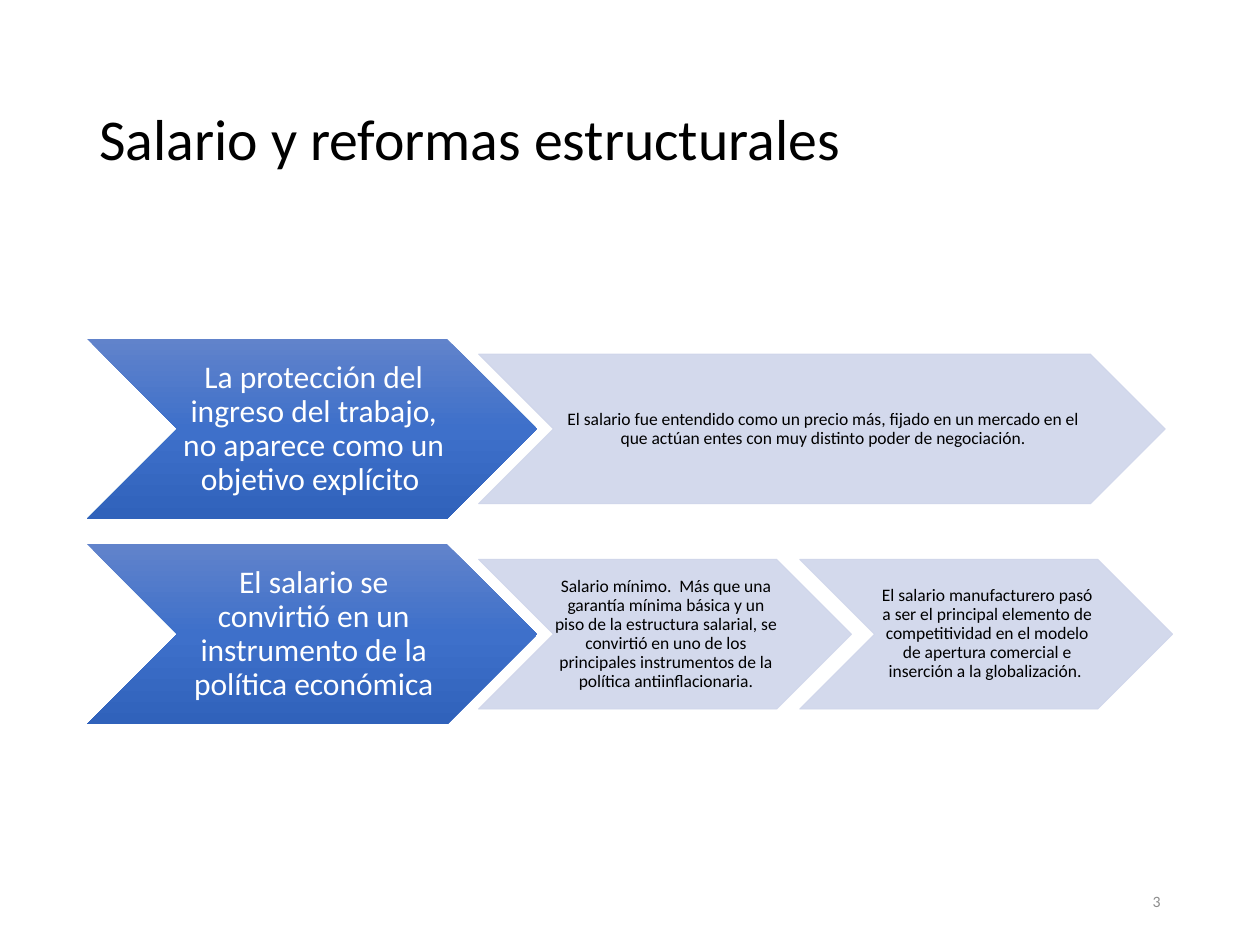
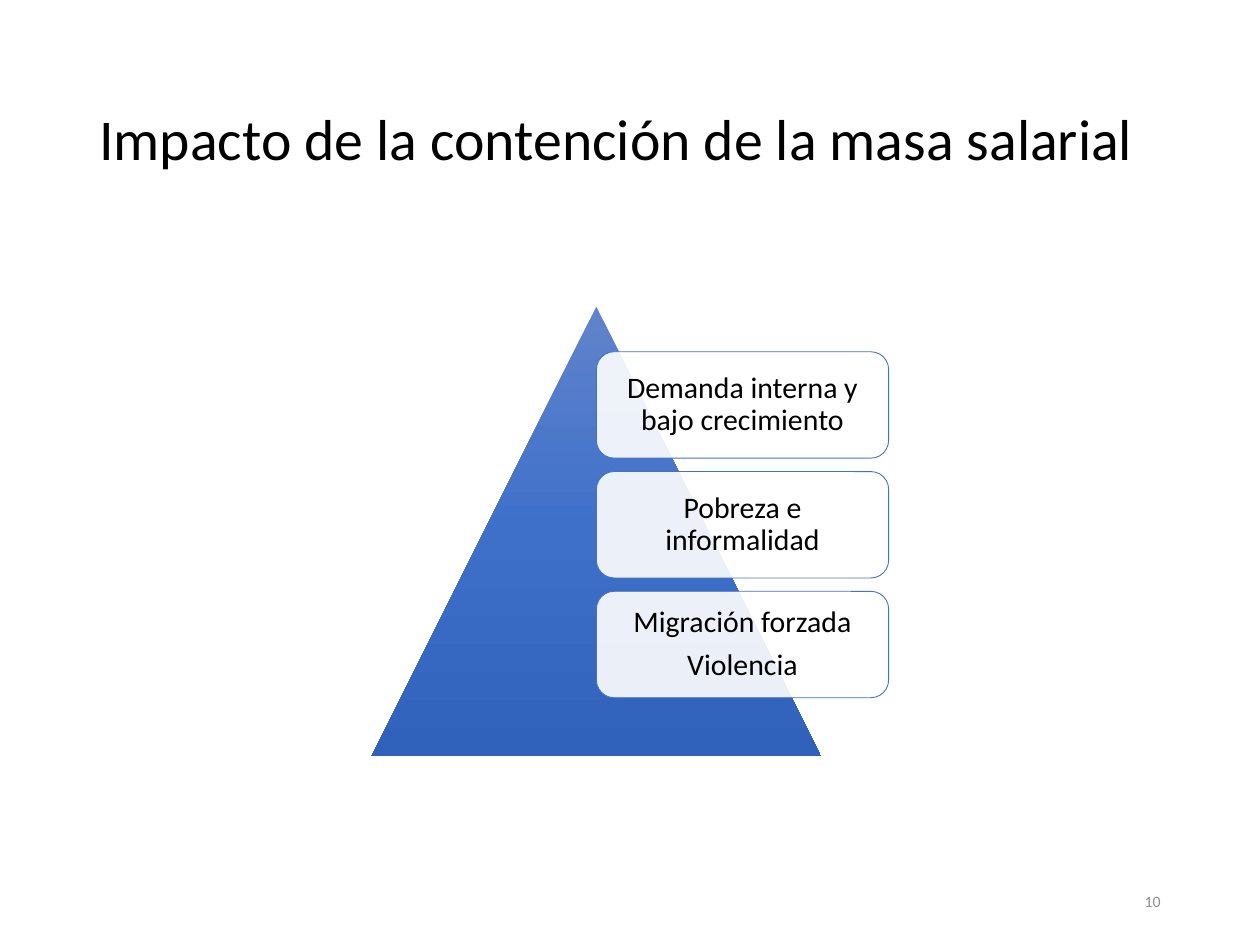
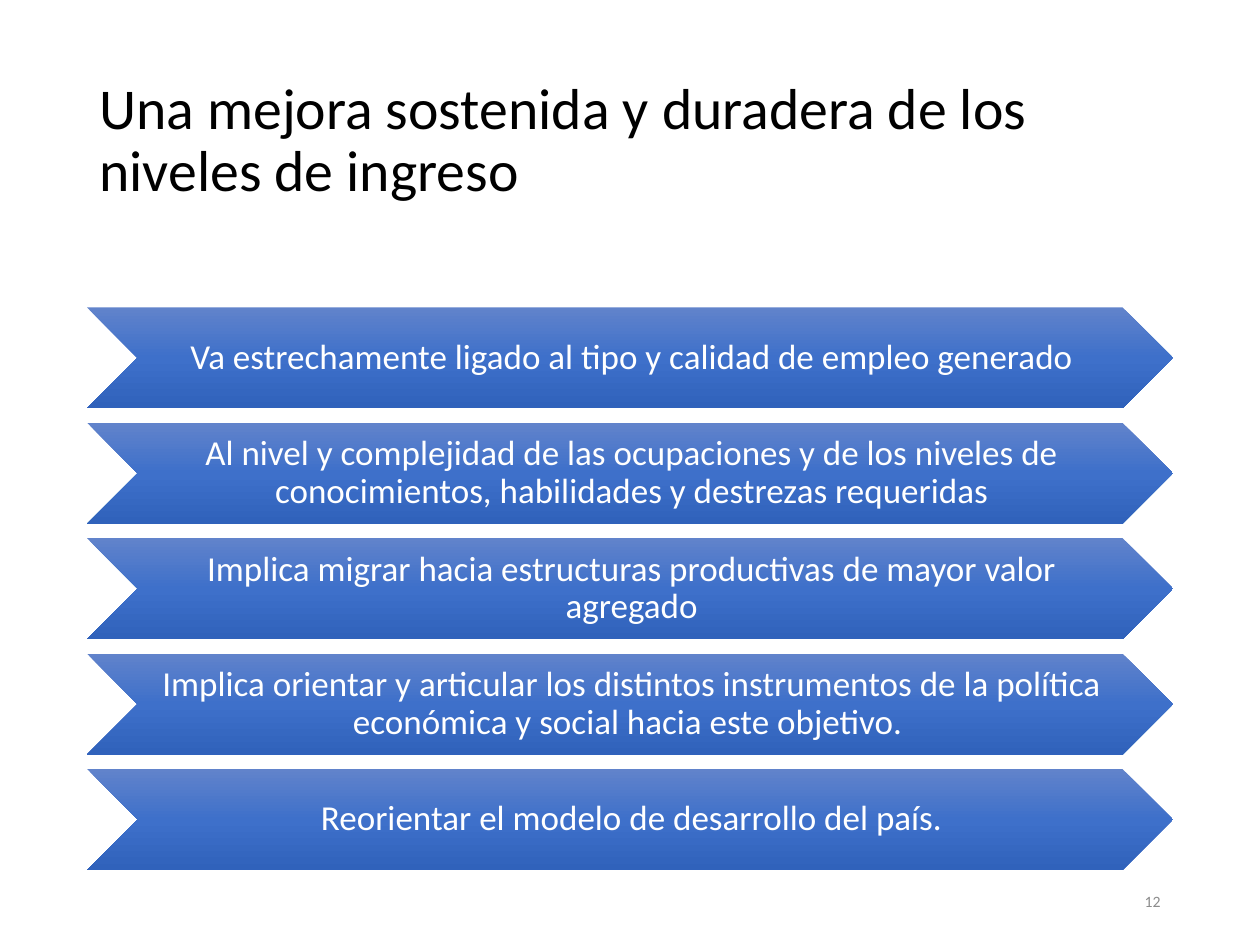
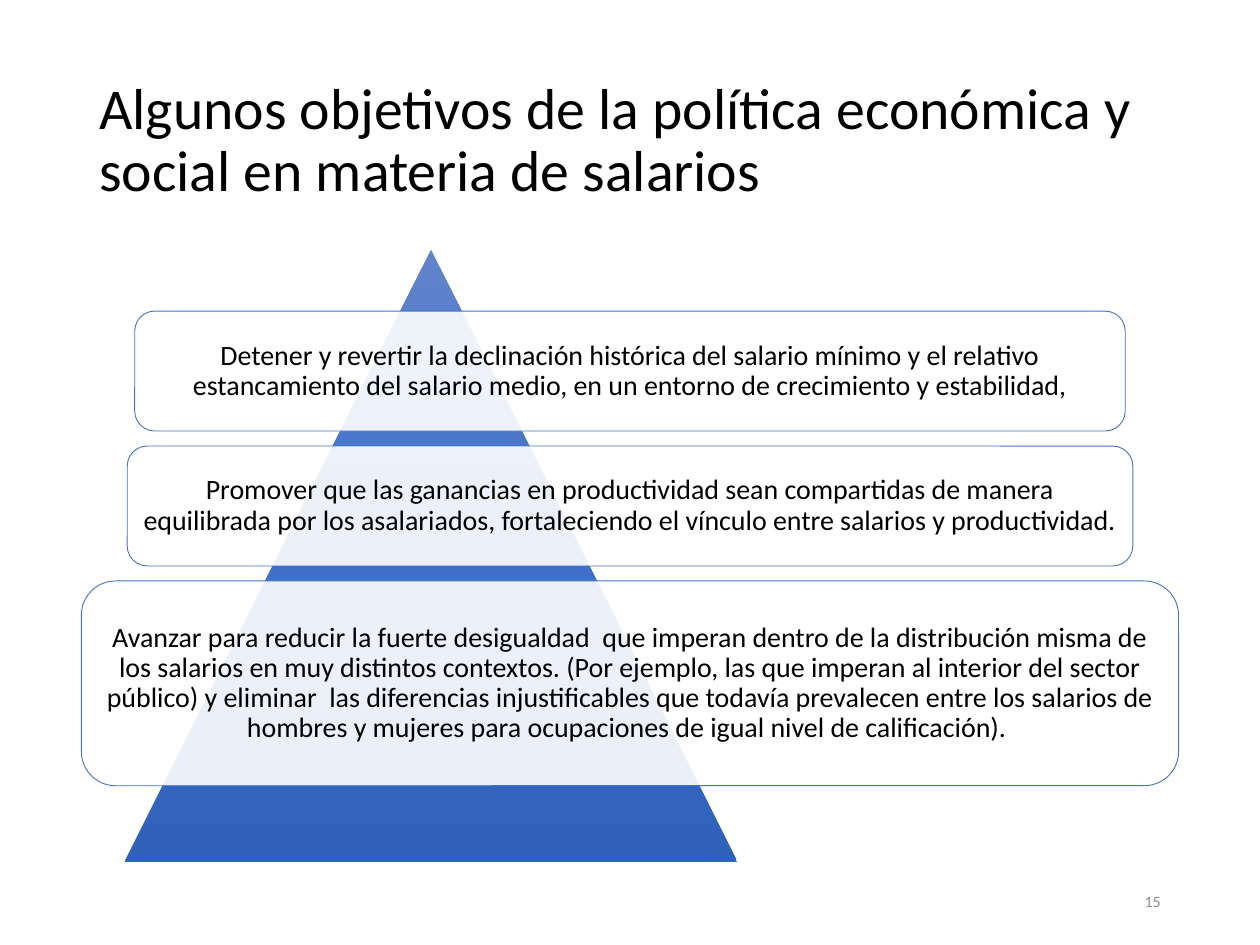
from copy import deepcopy

from pptx import Presentation
from pptx.dml.color import RGBColor
from pptx.enum import shapes, text
from pptx.oxml.ns import qn
from pptx.util import Pt

FONT = "Calibri"
BLACK = RGBColor(0x00, 0x00, 0x00)
WHITE = RGBColor(0xFF, 0xFF, 0xFF)
GREY = RGBColor(0x8C, 0x8C, 0x8C)
BLUE = RGBColor(0x44, 0x72, 0xC4)
PALE = RGBColor(0xCF, 0xD5, 0xEA)
GRADIENT = [
    (0, RGBColor(0x61, 0x83, 0xCB)),
    (0.5, RGBColor(0x3E, 0x70, 0xCA)),
    (1, RGBColor(0x30, 0x62, 0xBB)),
]

CHEVRON = shapes.MSO_SHAPE.CHEVRON
TRIANGLE = shapes.MSO_SHAPE.ISOSCELES_TRIANGLE
ROUNDED = shapes.MSO_SHAPE.ROUNDED_RECTANGLE
LEFT, CENTER, RIGHT = text.PP_ALIGN.LEFT, text.PP_ALIGN.CENTER, text.PP_ALIGN.RIGHT

MARGIN = 49.7
CONTENT_WIDTH = 620.6
DARK_INSETS = (2, 1, 0, 1)
PALE_INSETS = (1, 1, 0, 1)
BOX_INSETS = (5, 5, 5, 5)


def write(shape, lines, size, color, align=CENTER, insets=(7.2, 3.6, 7.2, 3.6), spacing=0.9):
    """Fill a shape with vertically centred paragraphs, one for each line."""
    frame = shape.text_frame
    frame.word_wrap = True
    frame.vertical_anchor = text.MSO_ANCHOR.MIDDLE
    frame.margin_left, frame.margin_top, frame.margin_right, frame.margin_bottom = map(Pt, insets)
    frame.text = "\n".join(lines)
    for para in frame.paragraphs:
        para.alignment = align
        para.line_spacing = spacing
        para.space_after = Pt(0.35 * size if align == CENTER else 0)
        para.font.name = FONT
        para.font.size = Pt(size)
        para.font.color.rgb = color


def draw(page, preset, left, top, width, height, fill=None, line=None):
    """Add a preset shape: blue gradient by default, or a 90 % opaque fill."""
    shape = page.shapes.add_shape(preset, Pt(left), Pt(top), Pt(width), Pt(height))
    shape.shadow.inherit = False
    if fill is None:
        shape.fill.gradient()
        shape.fill.gradient_angle = 270
        stop_list = shape._element.spPr.find(".//" + qn("a:gsLst"))
        stop_list.append(deepcopy(stop_list[-1]))
        for stop, (position, color) in zip(shape.fill.gradient_stops, GRADIENT):
            stop.position = position
            stop.color.rgb = color
    else:
        shape.fill.solid()
        shape.fill.fore_color.rgb = fill
    if line is None:
        shape.line.fill.background()
    else:
        shape.line.color.rgb = line
        shape.line.width = Pt(0.5)
    if fill is not None:
        for color in shape._element.spPr.iter(qn("a:srgbClr")):
            if color.get("val") == str(fill):
                color.makeelement(qn("a:alpha"), {"val": "90000"})
                alpha = color.makeelement(qn("a:alpha"), {"val": "90000"})
                color.append(alpha)
    return shape


deck = Presentation()
deck.slide_width, deck.slide_height = Pt(720), Pt(540)

pages = []
for title, number in [
    ("Salario y reformas estructurales", 3),
    ("Impacto de la contención de la masa salarial", 10),
    ("Una mejora sostenida y duradera de los niveles de ingreso", 12),
    ("Algunos objetivos de la política económica y social en materia de salarios", 15),
]:
    page = deck.slides.add_slide(deck.slide_layouts[6])
    heading = page.shapes.add_textbox(Pt(MARGIN), Pt(28.8), Pt(CONTENT_WIDTH), Pt(104.4))
    write(heading, [title], 33, BLACK, LEFT)
    footer = page.shapes.add_textbox(Pt(508.3), Pt(500.4), Pt(162), Pt(28.8))
    write(footer, [str(number)], 9, GREY, RIGHT, spacing=1)
    pages.append(page)
reforms, impact, improvement, goals = pages

# Wages and reforms: each statement is followed by its consequences
reform_rows = [
    ("La protección del ingreso del trabajo, no aparece como un objetivo explícito ", 392.4, [
        "El salario fue entendido como un precio más, fijado en un mercado en el que actúan "
        "entes con muy distinto poder de negociación.",
    ]),
    ("El salario se convirtió en un instrumento de la política económica", 213.1, [
        "Salario mínimo.  Más que una garantía mínima básica y un piso de la estructura salarial, "
        "se convirtió en uno de los principales instrumentos de la política antiinflacionaria.",
        "El salario manufacturero pasó a ser el principal elemento de competitividad en el modelo "
        "de apertura comercial e inserción a la globalización. ",
    ]),
]
for row, (statement, width, consequences) in enumerate(reform_rows):
    top = 193.7 + row * 117.3
    arrow = draw(reforms, CHEVRON, MARGIN, top, 257.2, 102.9)
    write(arrow, [statement], 18, WHITE, insets=DARK_INSETS)
    for column, consequence in enumerate(consequences):
        arrow = draw(reforms, CHEVRON, 273.5 + column * 183.5, top + 8.7, width, 85.5, PALE, PALE)
        write(arrow, [consequence], 10, BLACK, insets=PALE_INSETS)

# Impact: equal boxes start at the triangle's axis
draw(impact, TRIANGLE, 212.3, 175.3, 257, 257)
effects = [
    ["Demanda interna y bajo crecimiento"],
    ["Pobreza e informalidad"],
    ["Migración forzada", "Violencia"],
]
for row, lines in enumerate(effects):
    box = draw(impact, ROUNDED, 340.8, 201 + row * 68.45, 167, 60.8, WHITE, BLUE)
    write(box, lines, 17, BLACK, insets=BOX_INSETS)

# Improvement: full-width arrows
conditions = [
    "Va estrechamente ligado al tipo y calidad de empleo generado",
    "Al nivel y complejidad de las ocupaciones y de los niveles de conocimientos, "
    "habilidades y destrezas requeridas",
    "Implica migrar hacia estructuras productivas de mayor valor agregado",
    "Implica orientar y articular los distintos instrumentos de la política económica "
    "y social hacia este objetivo. ",
    "Reorientar el modelo de desarrollo del país.",
]
for row, condition in enumerate(conditions):
    arrow = draw(improvement, CHEVRON, MARGIN, 175.6 + row * 65.95, CONTENT_WIDTH, 57.8)
    write(arrow, [condition], 20, WHITE, insets=DARK_INSETS)

# Goals: boxes centred on the page, stacked with equal gaps
draw(goals, TRIANGLE, 71.3, 142.6, 350, 350)
goal_boxes = [
    (566, 68.5, "Detener y revertir la declinación histórica del salario mínimo y el relativo "
     "estancamiento del salario medio, en un entorno de crecimiento y estabilidad,"),
    (574.6, 68.5, "Promover que las ganancias en productividad sean compartidas de manera "
     "equilibrada por los asalariados, fortaleciendo el vínculo entre salarios y productividad."),
    (627, 117, "Avanzar para reducir la fuerte desigualdad  que imperan dentro de la distribución "
     "misma de los salarios en muy distintos contextos. (Por ejemplo, las que imperan al interior "
     "del sector público) y eliminar  las diferencias injustificables que todavía prevalecen entre "
     "los salarios de hombres y mujeres para ocupaciones de igual nivel de calificación). "),
]
top = 177.8
for width, height, goal in goal_boxes:
    box = draw(goals, ROUNDED, 360 - width / 2, top, width, height, WHITE, BLUE)
    write(box, [goal], 16, BLACK, insets=BOX_INSETS)
    top += height + 8.6

deck.save("out.pptx")
